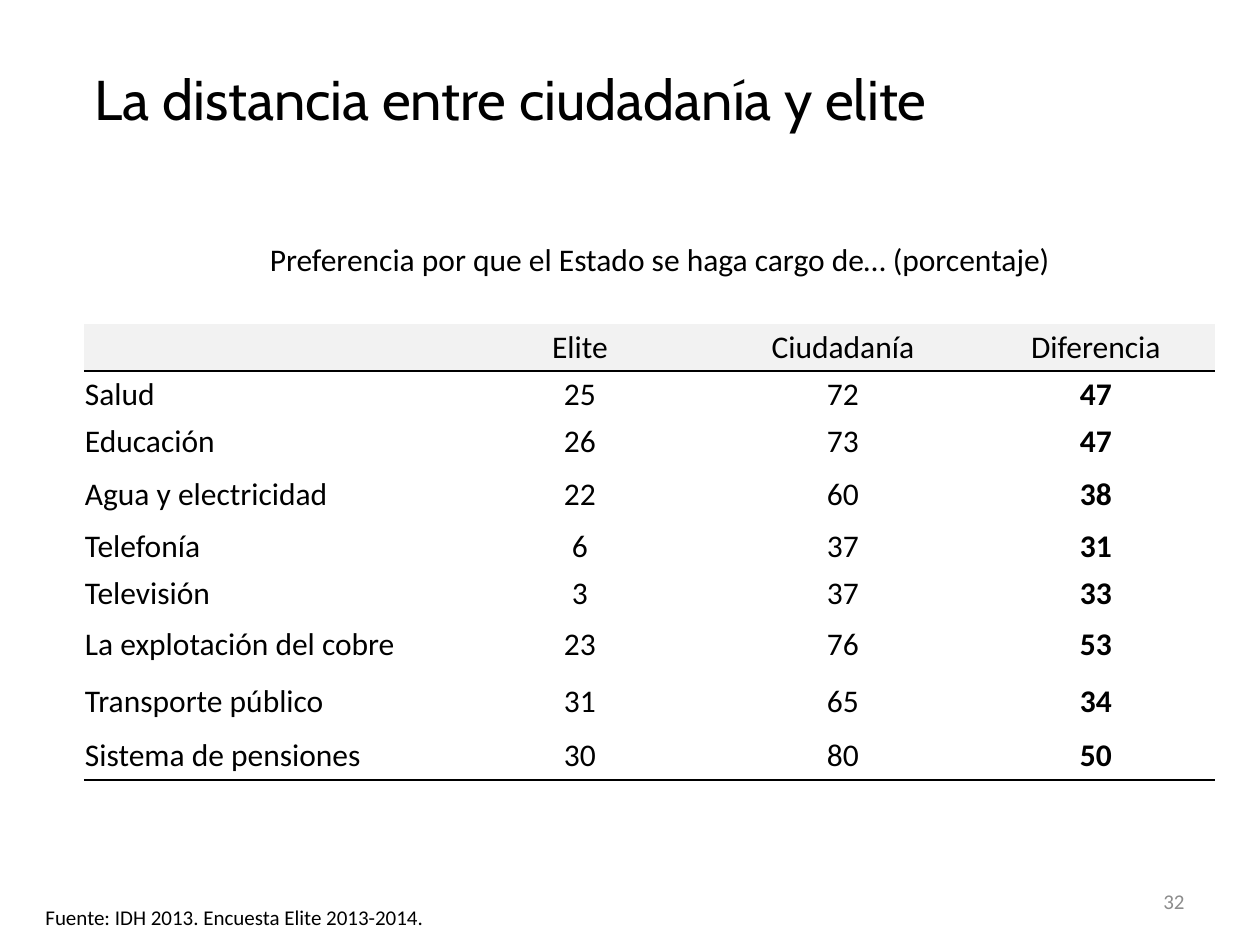
from lxml import etree
from pptx import Presentation
from pptx.dml.color import RGBColor
from pptx.enum.text import MSO_ANCHOR, PP_ALIGN
from pptx.oxml.ns import qn
from pptx.util import Pt

PX = 914400 // 126
LEFT, MID, RIGHT = PP_ALIGN.LEFT, PP_ALIGN.CENTER, PP_ALIGN.RIGHT
TOP, CENTER = MSO_ANCHOR.TOP, MSO_ANCHOR.MIDDLE
COLORS = {"ink": "000000", "head": "F2F2F2", "page": "8C8C8C"}


def write(frame, text, size, align=LEFT, color="ink", face="Calibri", bold=False):
    para = frame.paragraphs[0]
    para.text = text
    para.alignment = align
    font = para.font
    font.name, font.size, font.bold = face, Pt(size), bold
    font.color.rgb = RGBColor.from_string(COLORS[color])


def border(cell, side, shown):
    line = etree.SubElement(cell._tc.get_or_add_tcPr(), qn("a:ln" + side), w=str(Pt(1)))
    if shown:
        fill = etree.SubElement(line, qn("a:solidFill"))
        etree.SubElement(fill, qn("a:srgbClr"), val=COLORS["ink"])
    else:
        etree.SubElement(line, qn("a:noFill"))


deck = Presentation()
deck.slide_width, deck.slide_height = 1260 * PX, 945 * PX
slide = deck.slides.add_slide(deck.slide_layouts[5])

title = slide.shapes.title
title.left, title.top, title.width, title.height = [n * PX for n in (82, 58, 1124, 117)]
title.text_frame.vertical_anchor = TOP
write(title.text_frame, "La distancia entre ciudadanía y elite", 32, face="Cabin")

rows = [
    ("", "Elite", "Ciudadanía", "Diferencia"),
    ("Salud", 25, 72, 47),
    ("Educación", 26, 73, 47),
    ("Agua y electricidad", 22, 60, 38),
    ("Telefonía", 6, 37, 31),
    ("Televisión", 3, 37, 33),
    ("La explotación del cobre", 23, 76, 53),
    ("Transporte público", 31, 65, 34),
    ("Sistema de pensiones", 30, 80, 50),
]
widths = [367, 258, 268, 238]
heights = [47, 47, 47, 58, 47, 47, 55, 59, 49]
last = len(rows) - 1

table = slide.shapes.add_table(
    len(rows), len(widths), 84 * PX, 324 * PX, sum(widths) * PX, sum(heights) * PX
).table
table.first_row = table.horz_banding = False
for col, width in zip(table.columns, widths):
    col.width = width * PX
for row, height in zip(table.rows, heights):
    row.height = height * PX

for r, row in enumerate(rows):
    for c, value in enumerate(row):
        cell = table.cell(r, c)
        cell.margin_left = cell.margin_right = cell.margin_top = PX
        cell.margin_bottom = 0
        cell.vertical_anchor = CENTER
        for side in "LR":
            border(cell, side, False)
        border(cell, "T", r == 1)
        border(cell, "B", r in (0, last))
        if r == 0:
            cell.fill.solid()
            cell.fill.fore_color.rgb = RGBColor.from_string(COLORS["head"])
        else:
            cell.fill.background()
        write(cell.text_frame, str(value), 18, MID if c else LEFT, bold=r > 0 and c == 3)

notes = [
    ((33, 898, 408, 38), "Fuente: IDH 2013. Encuesta Elite 2013-2014.", 12, LEFT, "ink", TOP, False),
    ((154, 234, 1012, 50), "Preferencia por que el Estado se haga cargo de… (porcentaje)",
     18, MID, "ink", TOP, True),
    ((903, 876, 294, 50), "32", 12, RIGHT, "page", CENTER, True),
]
for place, text, size, align, color, anchor, wrap in notes:
    frame = slide.shapes.add_textbox(*[n * PX for n in place]).text_frame
    frame.word_wrap = wrap
    frame.vertical_anchor = anchor
    write(frame, text, size, align, color)

deck.save("out.pptx")
